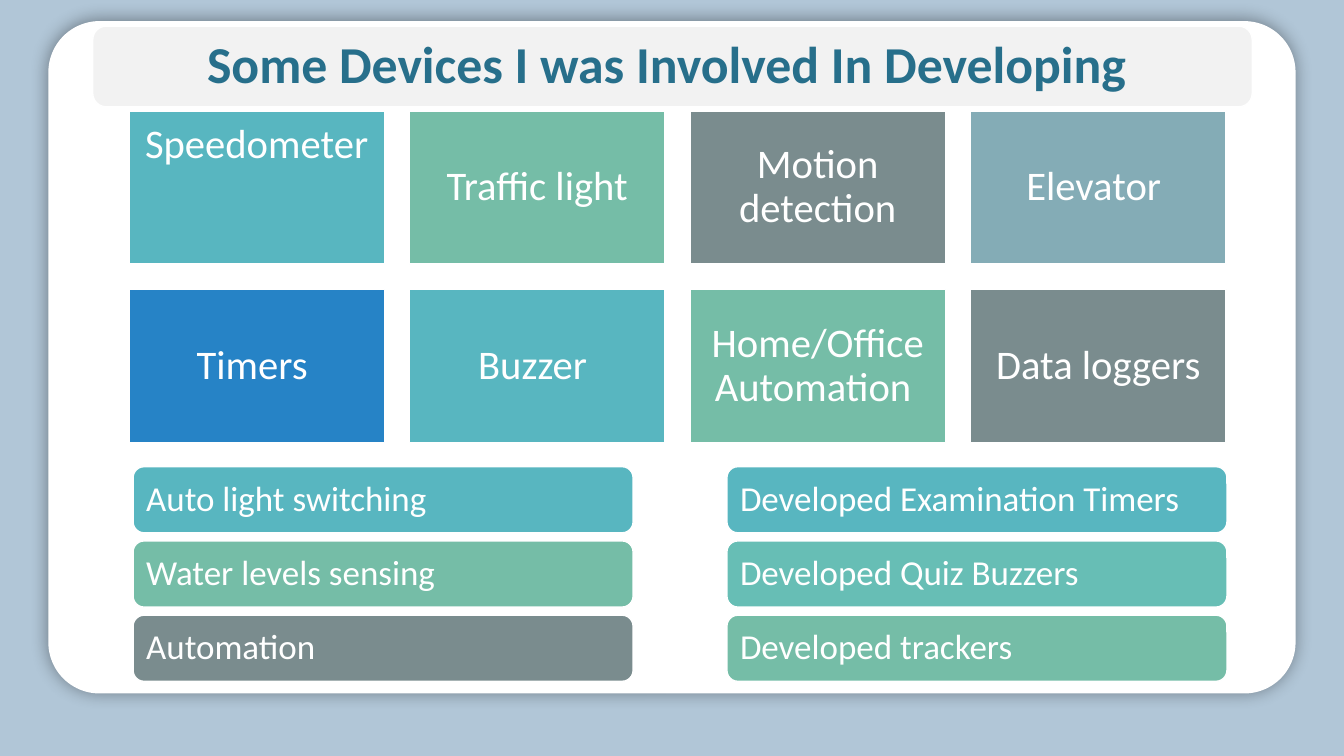
"""Build a slide of devices: a title banner, a grid of tiles and two lists."""
from dataclasses import dataclass

from lxml import etree
from pptx import Presentation
from pptx.dml.color import RGBColor
from pptx.enum.shapes import MSO_SHAPE
from pptx.enum.text import MSO_ANCHOR, MSO_AUTO_SIZE, PP_ALIGN
from pptx.oxml.ns import qn
from pptx.util import Inches, Pt

RECTANGLE, ROUNDED = MSO_SHAPE.RECTANGLE, MSO_SHAPE.ROUNDED_RECTANGLE
TOP, MIDDLE = MSO_ANCHOR.TOP, MSO_ANCHOR.MIDDLE
LEFT, CENTER = PP_ALIGN.LEFT, PP_ALIGN.CENTER
NO_FIT = MSO_AUTO_SIZE.NONE


@dataclass(frozen=True)
class Theme:
    """Colours, font and type sizes of the slide."""
    font: str = "Calibri"
    title_size: int = 37
    tile_size: int = 29
    bar_size: int = 25
    backdrop: str = "B1C6D7"
    white: str = "FFFFFF"
    banner: str = "F2F2F2"
    title: str = "276F8B"
    shadow: str = "000000"
    teal: str = "58B6C0"
    aqua: str = "67BEB5"
    green: str = "75BDA7"
    grey: str = "7A8C8E"
    steel: str = "84ACB6"
    blue: str = "2683C6"


@dataclass(frozen=True)
class Box:
    """A rectangle in inches."""
    left: float
    top: float
    width: float
    height: float

    def lengths(self):
        """Return left, top, width and height as lengths."""
        return [Inches(v) for v in (self.left, self.top, self.width, self.height)]

    def cells(self, columns, rows, gap_x=0.0, gap_y=0.0):
        """Return the boxes of an even grid, row by row."""
        width = (self.width - gap_x * (columns - 1)) / columns
        height = (self.height - gap_y * (rows - 1)) / rows
        return [Box(self.left + column * (width + gap_x),
                    self.top + row * (height + gap_y), width, height)
                for row in range(rows) for column in range(columns)]


THEME = Theme()
SLIDE = Box(0, 0, 13.33, 7.5)
PANEL = Box(0.48, 0.21, 12.37, 6.67)
BANNER = Box(0.92, 0.26, 11.5, 0.8)
TILES = Box(1.28, 1.1, 10.88, 3.29)
LISTS = Box(1.32, 4.63, 10.85, 2.13)

TILE_ITEMS = [
    ("Speedometer", THEME.teal, TOP), ("Traffic light", THEME.green, MIDDLE),
    ("Motion detection", THEME.grey, MIDDLE), ("Elevator ", THEME.steel, MIDDLE),
    ("Timers ", THEME.blue, MIDDLE), ("Buzzer ", THEME.teal, MIDDLE),
    ("Home/Office Automation ", THEME.green, MIDDLE),
    ("Data loggers", THEME.grey, MIDDLE),
]
LIST_ITEMS = [
    [("Auto light switching", THEME.teal), ("Water levels sensing", THEME.green),
     ("Automation", THEME.grey)],
    [("Developed Examination Timers", THEME.teal),
     ("Developed Quiz Buzzers", THEME.aqua), ("Developed trackers", THEME.green)],
]


def write(shape, text, size, color=THEME.white, bold=False, align=CENTER,
          anchor=MIDDLE, inset=0.12):
    """Put one formatted paragraph into a shape."""
    frame = shape.text_frame
    frame.word_wrap = True
    frame.auto_size = NO_FIT
    frame.vertical_anchor = anchor
    frame.margin_left = frame.margin_right = Inches(inset)
    frame.margin_top = frame.margin_bottom = Inches(inset)
    para = frame.paragraphs[0]
    para.alignment = align
    para.line_spacing = 0.9
    span = para.add_run()
    span.text = text
    span.font.name = THEME.font
    span.font.size = Pt(size)
    span.font.bold = bold
    span.font.color.rgb = RGBColor.from_string(color)


def add_block(page, box, kind, fill, outlined=True):
    """Add a filled shape, with a thin white outline if wanted."""
    block = page.shapes.add_shape(kind, *box.lengths())
    block.shadow.inherit = False
    block.fill.solid()
    block.fill.fore_color.rgb = RGBColor.from_string(fill)
    if outlined:
        block.line.color.rgb = RGBColor.from_string(THEME.white)
        block.line.width = Pt(1)
    else:
        block.line.fill.background()
    return block


def add_panel(page, box):
    """Add the white rounded panel with its soft shadow."""
    panel = add_block(page, box, ROUNDED, THEME.white, outlined=False)
    panel.adjustments[0] = 0.076
    effects = panel.element.spPr.find(qn("a:effectLst"))
    shadow = etree.SubElement(effects, qn("a:outerShdw"), blurRad=str(Pt(13)),
                              dist="0", algn="ctr", rotWithShape="0")
    color = etree.SubElement(shadow, qn("a:srgbClr"), val=THEME.shadow)
    etree.SubElement(color, qn("a:alpha"), val="40000")


def add_title(page, box, text):
    """Add the banner and lay the title placeholder over it."""
    banner = add_block(page, box, ROUNDED, THEME.banner)
    title = page.shapes.title
    title.left, title.top, title.width, title.height = box.lengths()
    write(title, text, THEME.title_size, color=THEME.title, bold=True, inset=0.15)
    banner.element.addnext(title.element)


def add_tiles(page, box, items):
    """Add the device tiles in four columns and two rows."""
    for cell, (text, fill, anchor) in zip(box.cells(4, 2, 0.25, 0.25), items):
        tile = add_block(page, cell, RECTANGLE, fill)
        write(tile, text, THEME.tile_size, anchor=anchor)


def add_lists(page, box, lists):
    """Add one column of rounded bars for each list."""
    for column, items in zip(box.cells(len(lists), 1, gap_x=0.93), lists):
        for cell, (text, fill) in zip(column.cells(1, len(items), gap_y=0.08), items):
            bar = add_block(page, cell, ROUNDED, fill)
            write(bar, text, THEME.bar_size, align=LEFT, inset=0.1)


def main():
    """Build and save the deck."""
    deck = Presentation()
    deck.slide_width, deck.slide_height = SLIDE.lengths()[2:]
    page = deck.slides.add_slide(deck.slide_layouts[5])
    page.background.fill.solid()
    page.background.fill.fore_color.rgb = RGBColor.from_string(THEME.backdrop)
    add_panel(page, PANEL)
    add_tiles(page, TILES, TILE_ITEMS)
    add_title(page, BANNER, "Some Devices I was Involved In Developing ")
    add_lists(page, LISTS, LIST_ITEMS)
    deck.save("out.pptx")


if __name__ == "__main__":
    main()
